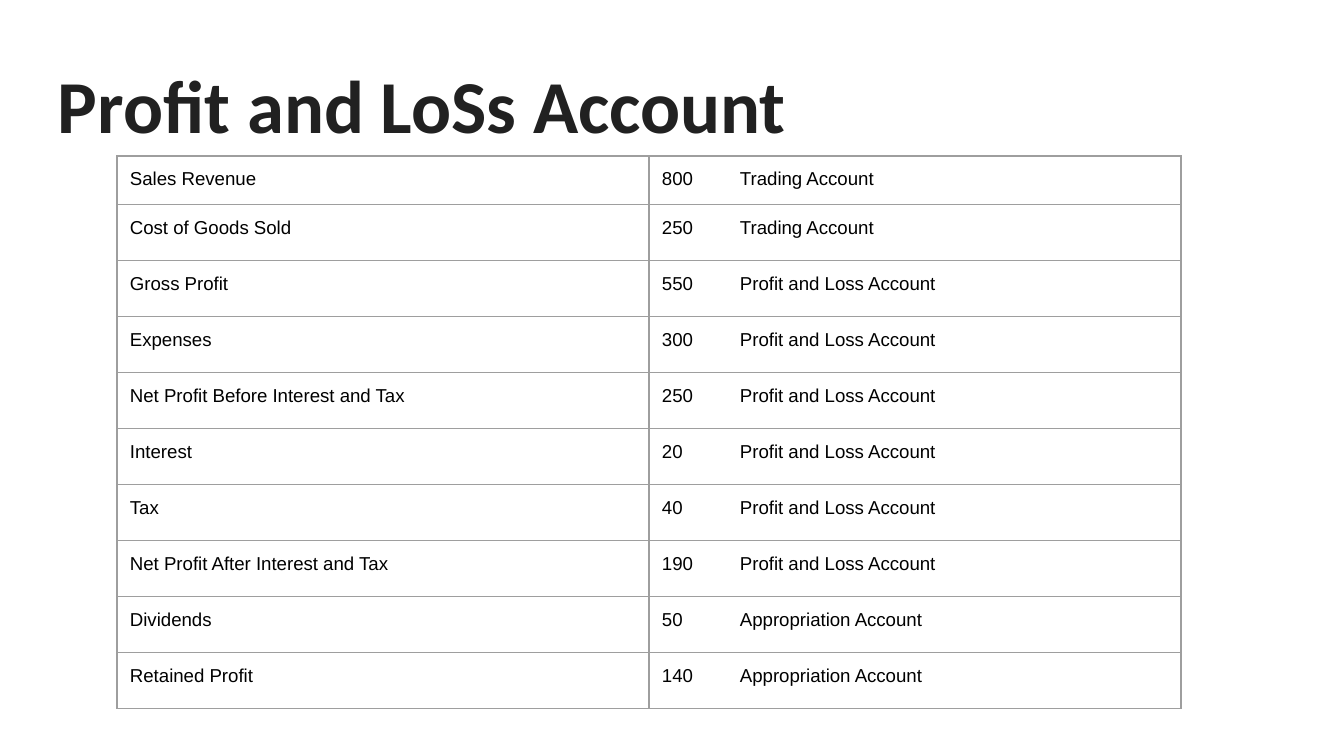
from lxml.etree import SubElement
from pptx import Presentation
from pptx.dml.color import RGBColor
from pptx.enum.text import MSO_ANCHOR
from pptx.oxml.ns import qn
from pptx.util import Pt

TITLE = "Profit and LoSs Account"
TRADE, PROFIT, SHARE = (
    "Trading Account", "Profit and Loss Account", "Appropriation Account")
ROWS = [
    ("Sales Revenue", 800, TRADE),
    ("Cost of Goods Sold", 250, TRADE),
    ("Gross Profit", 550, PROFIT),
    ("Expenses", 300, PROFIT),
    ("Net Profit Before Interest and Tax", 250, PROFIT),
    ("Interest", 20, PROFIT),
    ("Tax", 40, PROFIT),
    ("Net Profit After Interest and Tax", 190, PROFIT),
    ("Dividends", 50, SHARE),
    ("Retained Profit", 140, SHARE),
]
INK, BLACK, GREY = "212121", "000000", "9E9E9E"
PAD, TAB = 13, 78
LEFT, TOP, COL, HEAD, ROW = 117, 156, 532, 48, 56


def px(n):
    return round(n * 914400 / 134.4)


def write(frame, text, size, font, color=BLACK, bold=False, tab=None):
    """Fill the frame with one run; tab is the px position of a tab stop."""
    para = frame.paragraphs[0]
    run = para.add_run()
    run.text = text
    run.font.size = Pt(size)
    run.font.name = font
    run.font.bold = bold
    run.font.color.rgb = RGBColor.from_string(color)
    if tab:
        stops = SubElement(para._p.get_or_add_pPr(), qn("a:tabLst"))
        SubElement(stops, qn("a:tab"), pos=str(px(tab)), algn="l")


def pad(box):
    box.margin_left = box.margin_right = px(PAD)
    box.margin_top = box.margin_bottom = px(PAD)
    box.vertical_anchor = MSO_ANCHOR.TOP


def edge(cell):
    """Draw a thin line on all four sides of the cell."""
    props = cell._tc.get_or_add_tcPr()
    for side in ("lnL", "lnR", "lnT", "lnB"):
        line = SubElement(props, qn(f"a:{side}"), w=str(Pt(0.75)))
        fill = SubElement(line, qn("a:solidFill"))
        SubElement(fill, qn("a:srgbClr"), val=GREY)


deck = Presentation()
deck.slide_width, deck.slide_height = px(1344), px(756)
slide = deck.slides.add_slide(deck.slide_layouts[6])

title = slide.shapes.add_textbox(px(45), px(46), px(1255), px(110)).text_frame
title.word_wrap = True
pad(title)
write(title, TITLE, 40, "Calibri", INK, bold=True)

high = HEAD + ROW * (len(ROWS) - 1)
table = slide.shapes.add_table(
    len(ROWS), 2, px(LEFT), px(TOP), px(COL * 2), px(high)).table
table.first_row = table.horz_banding = False
for col in table.columns:
    col.width = px(COL)
for i, (name, sum_, account) in enumerate(ROWS):
    table.rows[i].height = px(ROW if i else HEAD)
    for j, text in enumerate((name, f"{sum_}\t{account}")):
        cell = table.cell(i, j)
        pad(cell)
        edge(cell)
        cell.fill.background()
        write(cell.text_frame, text, 10, "Arial", tab=TAB if j else None)

deck.save("out.pptx")
